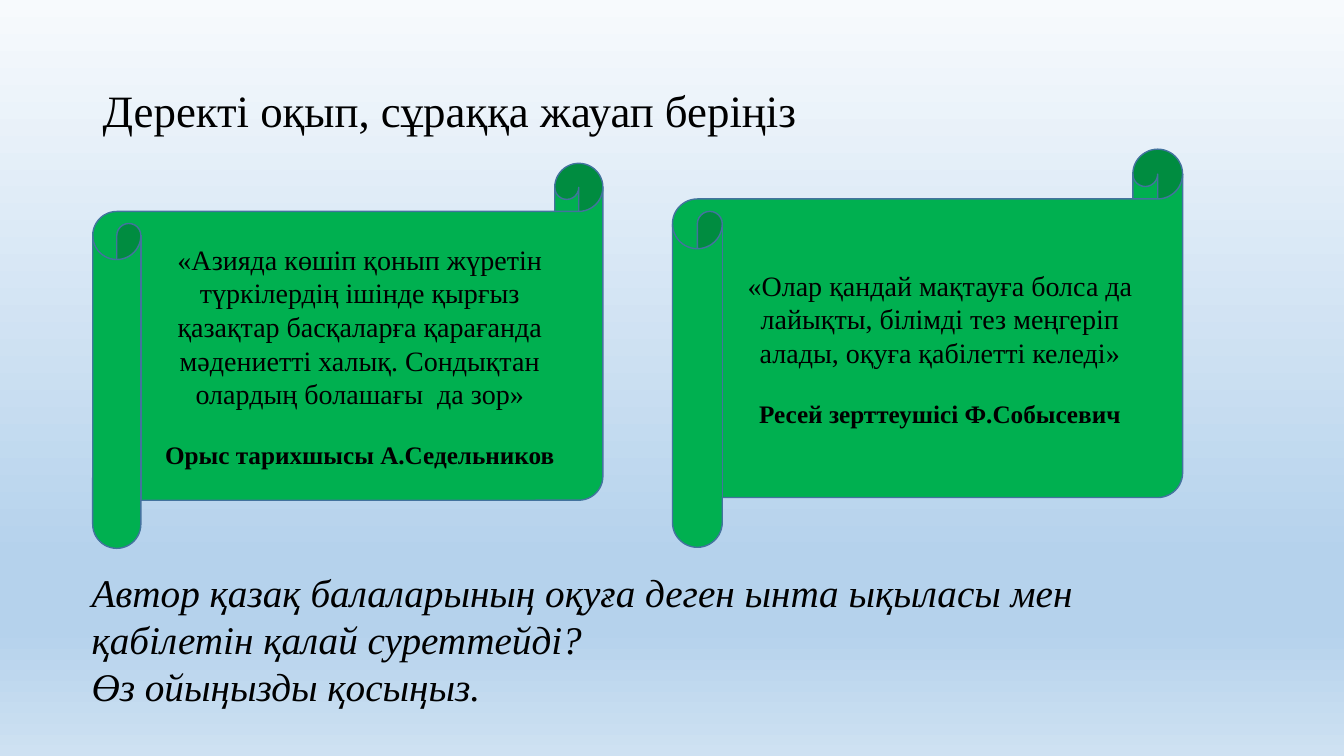
from copy import deepcopy
from dataclasses import dataclass

from pptx import Presentation
from pptx.dml.color import RGBColor
from pptx.enum.shapes import MSO_SHAPE as SHAPE
from pptx.enum.text import MSO_ANCHOR as ANCHOR, PP_ALIGN as ALIGN
from pptx.oxml.ns import qn
from pptx.util import Inches, Pt


@dataclass(frozen=True)
class Theme:
    font: str = "Times New Roman"
    ink: str = "000000"
    scroll: str = "00B050"
    outline: str = "43739E"
    sky: tuple = ((0, "F7FAFD"), (0.74, "B5D2EC"), (0.83, "B5D2EC"), (1, "CEE1F2"))
    title: int = 32
    question: int = 28
    quote: int = 20
    author: int = 18


THEME = Theme()


def rgb(value):
    return RGBColor.from_string(value)


def add_text(tf, text, size, first=False, bold=False, italic=False,
             align=ALIGN.LEFT, before=0, spacing=1.0):
    p = tf.paragraphs[0] if first else tf.add_paragraph()
    p.alignment = align
    p.space_before = Pt(before)
    p.line_spacing = spacing
    r = p.add_run()
    r.text = text
    r.font.name = THEME.font
    r.font.size = Pt(size)
    r.font.bold = bold
    r.font.italic = italic
    r.font.color.rgb = rgb(THEME.ink)


def add_text_box(slide, box, anchor=ANCHOR.TOP):
    tf = slide.shapes.add_textbox(*map(Inches, box)).text_frame
    tf.word_wrap = True
    tf.vertical_anchor = anchor
    return tf


def paint_background(slide):
    fill = slide.background.fill
    fill.gradient()
    fill.gradient_angle = 270
    stop_list = slide.element.find(".//" + qn("a:gsLst"))
    while len(stop_list) < len(THEME.sky):
        stop_list.append(deepcopy(stop_list[0]))
    for stop, (position, color) in zip(fill.gradient_stops, THEME.sky):
        stop.position = position
        stop.color.rgb = rgb(color)


def add_title(slide, box, text):
    tf = add_text_box(slide, box, ANCHOR.MIDDLE)
    add_text(tf, text, THEME.title, first=True, spacing=0.9)


def add_quote_scroll(slide, box, quote, author):
    sp = slide.shapes.add_shape(SHAPE.HORIZONTAL_SCROLL, *map(Inches, box))
    sp.shadow.inherit = False
    sp.fill.solid()
    sp.fill.fore_color.rgb = rgb(THEME.scroll)
    sp.line.color.rgb = rgb(THEME.outline)
    sp.line.width = Pt(1)
    tf = sp.text_frame
    tf.word_wrap = True
    tf.vertical_anchor = ANCHOR.MIDDLE
    add_text(tf, quote, THEME.quote, first=True, align=ALIGN.CENTER)
    add_text(tf, author, THEME.author, bold=True, align=ALIGN.CENTER,
             before=THEME.author * 1.15)


def add_questions(slide, box, questions):
    tf = add_text_box(slide, box)
    for i, question in enumerate(questions):
        add_text(tf, question, THEME.question, first=i == 0, italic=True)


def main():
    prs = Presentation()
    prs.slide_width, prs.slide_height = Inches(13.33), Inches(7.5)
    slide = prs.slides.add_slide(prs.slide_layouts[6])
    paint_background(slide)
    add_title(slide, (0.92, 0.4, 11.5, 1.45), "Деректі оқып, сұраққа жауап беріңіз")
    add_quote_scroll(
        slide, (0.92, 1.62, 5.06, 3.82),
        "«Азияда көшіп қонып жүретін түркілердің ішінде қырғыз қазақтар "
        "басқаларға қарағанда мәдениетті халық. Сондықтан олардың "
        "болашағы  да зор»",
        "Орыс тарихшысы А.Седельников")
    add_quote_scroll(
        slide, (6.67, 1.48, 5.06, 3.95),
        "«Олар қандай мақтауға болса да лайықты, білімді тез меңгеріп "
        "алады, оқуға қабілетті келеді»",
        "Ресей зерттеушісі Ф.Собысевич")
    add_questions(slide, (0.81, 5.59, 11.32, 1.51), (
        "Автор қазақ балаларының оқуға деген ынта ықыласы мен "
        "қабілетін қалай суреттейді?",
        "Өз ойыңызды қосыңыз."))
    prs.save("out.pptx")


if __name__ == "__main__":
    main()
